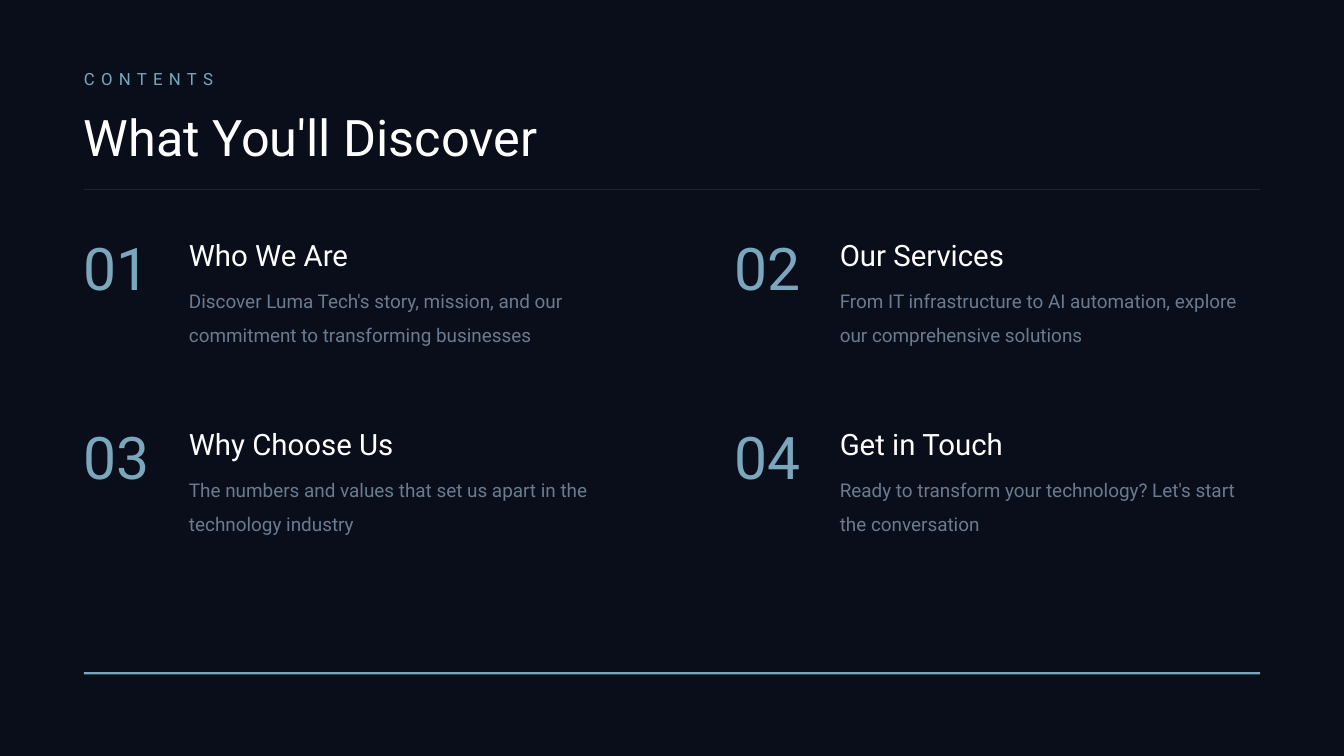
"""Build a contents slide with four numbered topics in a two-column grid."""
from lxml import etree
from pptx import Presentation
from pptx.dml.color import RGBColor
from pptx.enum.shapes import MSO_SHAPE
from pptx.enum.text import MSO_ANCHOR
from pptx.oxml.ns import qn
from pptx.util import Inches, Pt

RECTANGLE = MSO_SHAPE.RECTANGLE
TOP, MIDDLE = MSO_ANCHOR.TOP, MSO_ANCHOR.MIDDLE

FONT = "Roboto"
NIGHT, WHITE, TEAL, SLATE = "0A0E1A", "FFFFFF", "7BA7BC", "6B7B8F"

LABEL = "CONTENTS"
TITLE = "What You'll Discover"
TOPICS = [
    ("Who We Are", "Discover Luma Tech's story, mission, and our commitment to transforming businesses"),
    ("Our Services", "From IT infrastructure to AI automation, explore our comprehensive solutions"),
    ("Why Choose Us", "The numbers and values that set us apart in the technology industry"),
    ("Get in Touch", "Ready to transform your technology? Let's start the conversation"),
]

MARGIN, CONTENT_WIDTH = 1.11, 15.56
COLUMNS = [(1.11, 6.39), (9.72, 5.56)]
FIRST_ROW, ROW_STEP = 3.06, 2.5
NUMBER_WIDTH = 1.39


def color(value):
    return RGBColor.from_string(value)


def add_text(page, text, left, top, width, height, *, size, fill,
             anchor=TOP, wrap=False, line_spacing=None, tracking=None):
    box = page.shapes.add_textbox(Inches(left), Inches(top), Inches(width), Inches(height))
    frame = box.text_frame
    frame.margin_left = frame.margin_right = frame.margin_top = frame.margin_bottom = 0
    frame.word_wrap = wrap
    frame.vertical_anchor = anchor
    para = frame.paragraphs[0]
    if line_spacing:
        para.line_spacing = line_spacing
    span = para.add_run()
    span.text = text
    span.font.name = FONT
    span.font.size = Pt(size)
    span.font.color.rgb = color(fill)
    if tracking:
        span._r.get_or_add_rPr().set("spc", str(tracking * 100))


def add_rule(page, top, height, opacity=None):
    rule = page.shapes.add_shape(
        RECTANGLE, Inches(MARGIN), Inches(top), Inches(CONTENT_WIDTH), Inches(height))
    rule.shadow.inherit = False
    rule.fill.solid()
    rule.fill.fore_color.rgb = color(TEAL)
    rule.line.fill.background()
    if opacity:
        shade = rule._element.spPr.find(qn("a:solidFill")).find(qn("a:srgbClr"))
        etree.SubElement(shade, qn("a:alpha")).set("val", str(opacity * 1000))


def add_topic(page, index, heading, detail):
    row, column = divmod(index, len(COLUMNS))
    left, detail_width = COLUMNS[column]
    top = FIRST_ROW + row * ROW_STEP
    text_left = left + NUMBER_WIDTH
    add_text(page, f"{index + 1:02d}", left, top, NUMBER_WIDTH, 0.97, size=56, fill=TEAL)
    add_text(page, heading, text_left, top + 0.06, 5.56, 0.49,
             size=28, fill=WHITE, anchor=MIDDLE)
    add_text(page, detail, text_left, top + 0.62, detail_width, 0.97,
             size=18, fill=SLATE, wrap=True, line_spacing=1.5)


def main():
    deck = Presentation()
    deck.slide_width, deck.slide_height = Inches(17.78), Inches(10)
    page = deck.slides.add_slide(deck.slide_layouts[6])
    page.background.fill.solid()
    page.background.fill.fore_color.rgb = color(NIGHT)

    add_text(page, LABEL, MARGIN, 0.83, 4.17, 0.42,
             size=16, fill=TEAL, anchor=MIDDLE, tracking=6)
    add_text(page, TITLE, MARGIN, 1.39, 6.94, 0.83, size=48, fill=WHITE, anchor=MIDDLE)
    add_rule(page, 2.5, 0.01, opacity=25)
    for index, (heading, detail) in enumerate(TOPICS):
        add_topic(page, index, heading, detail)
    add_rule(page, 8.89, 0.03)

    deck.save("out.pptx")


if __name__ == "__main__":
    main()
